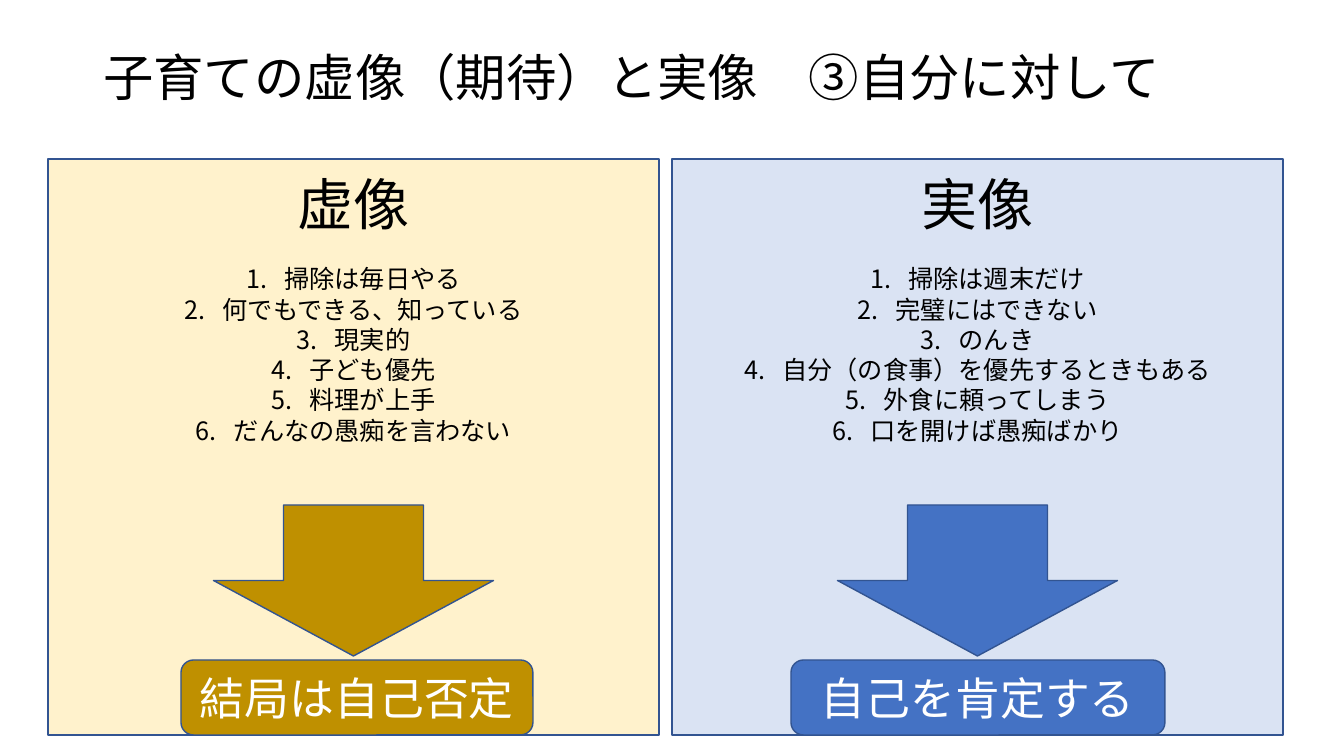
"""Build a slide that sets expected parenting beside real parenting."""
from lxml.etree import SubElement
from pptx import Presentation
from pptx.dml.color import RGBColor
from pptx.enum.shapes import MSO_SHAPE
from pptx.enum.text import MSO_ANCHOR, MSO_AUTO_SIZE, PP_ALIGN
from pptx.oxml.ns import qn
from pptx.util import Emu, Pt

FONT = "Noto Sans CJK JP"
BLACK, WHITE, OUTLINE = "000000", "FFFFFF", "325491"
HEADLINE = "子育ての虚像（期待）と実像　③自分に対して"
SIDES = [
    {
        "heading": "虚像", "pale": "FFF2CC", "strong": "BF9000",
        "items": ["掃除は毎日やる", "何でもできる、知っている", "現実的",
                  "子ども優先", "料理が上手", "だんなの愚痴を言わない"],
        "conclusion": "結局は自己否定", "conclusion_left": 181, "conclusion_width": 352,
    },
    {
        "heading": "実像", "pale": "DAE3F3", "strong": "4472C4",
        "items": ["掃除は週末だけ", "完璧にはできない", "のんき",
                  "自分（の食事）を優先するときもある", "外食に頼ってしまう", "口を開けば愚痴ばかり"],
        "conclusion": "自己を肯定する", "conclusion_left": 791, "conclusion_width": 374,
    },
]
PANEL_LEFT, PANEL_TOP, PANEL_WIDTH, PANEL_HEIGHT = 48, 159, 611, 576
PANEL_GAP = 13
ARROW_TOP, ARROW_WIDTH, ARROW_HEIGHT = 505, 280, 151
CONCLUSION_TOP, CONCLUSION_HEIGHT = 660, 75
LINE_RATIO = 1.2
INDENT = 38


def px(length):
    return Emu(round(length * 914400 / 100.8))


def color(value):
    return RGBColor.from_string(value)


def apply(target, formats):
    for key, value in formats.items():
        setattr(target, key, value)


def write(paragraph, wording, size, ink, **formats):
    run = paragraph.add_run()
    run.text = wording
    apply(run.font, {"name": FONT, "size": Pt(size)})
    run.font.color.rgb = color(ink)
    SubElement(run.font._element, qn("a:ea"), typeface=FONT)
    apply(paragraph, formats)


def number(paragraph):
    properties = paragraph._p.get_or_add_pPr()
    properties.set("marL", str(px(INDENT)))
    properties.set("indent", str(-px(INDENT)))
    SubElement(properties, qn("a:buAutoNum"), type="arabicPeriod")


def add_block(slide, kind, box, fill):
    block = slide.shapes.add_shape(kind, *map(px, box))
    block.shadow.inherit = False
    block.fill.solid()
    block.fill.fore_color.rgb = color(fill)
    block.line.color.rgb = color(OUTLINE)
    block.line.width = Pt(1)
    return block


def add_side(slide, side, left):
    panel = add_block(slide, MSO_SHAPE.RECTANGLE,
                      (left, PANEL_TOP, PANEL_WIDTH, PANEL_HEIGHT), side["pale"])
    frame = panel.text_frame
    apply(frame, {"vertical_anchor": MSO_ANCHOR.TOP, "margin_top": px(11), "word_wrap": True})
    write(frame.paragraphs[0], side["heading"], 40, BLACK, alignment=PP_ALIGN.CENTER,
          line_spacing=Pt(40 * LINE_RATIO), space_after=Pt(19))
    for item in side["items"]:
        paragraph = frame.add_paragraph()
        write(paragraph, item, 18, BLACK, alignment=PP_ALIGN.CENTER,
              line_spacing=Pt(18 * LINE_RATIO))
        number(paragraph)

    arrow_left = left + (PANEL_WIDTH - ARROW_WIDTH) / 2
    add_block(slide, MSO_SHAPE.DOWN_ARROW,
              (arrow_left, ARROW_TOP, ARROW_WIDTH, ARROW_HEIGHT), side["strong"])
    conclusion = add_block(slide, MSO_SHAPE.ROUNDED_RECTANGLE,
                           (side["conclusion_left"], CONCLUSION_TOP,
                            side["conclusion_width"], CONCLUSION_HEIGHT), side["strong"])
    conclusion.text_frame.vertical_anchor = MSO_ANCHOR.MIDDLE
    write(conclusion.text_frame.paragraphs[0], side["conclusion"], 32, WHITE,
          alignment=PP_ALIGN.CENTER)


def main():
    deck = Presentation()
    apply(deck, {"slide_width": px(1344), "slide_height": px(756)})
    slide = deck.slides.add_slide(deck.slide_layouts[5])
    title = slide.shapes.title
    apply(title, {"left": px(93), "top": px(40), "width": px(1159), "height": px(81)})
    apply(title.text_frame, {"vertical_anchor": MSO_ANCHOR.MIDDLE, "word_wrap": True,
                             "auto_size": MSO_AUTO_SIZE.NONE})
    write(title.text_frame.paragraphs[0], HEADLINE, 36, BLACK,
          alignment=PP_ALIGN.LEFT, line_spacing=0.9)
    for index, side in enumerate(SIDES):
        add_side(slide, side, PANEL_LEFT + index * (PANEL_WIDTH + PANEL_GAP))
    deck.save("out.pptx")


if __name__ == "__main__":
    main()
